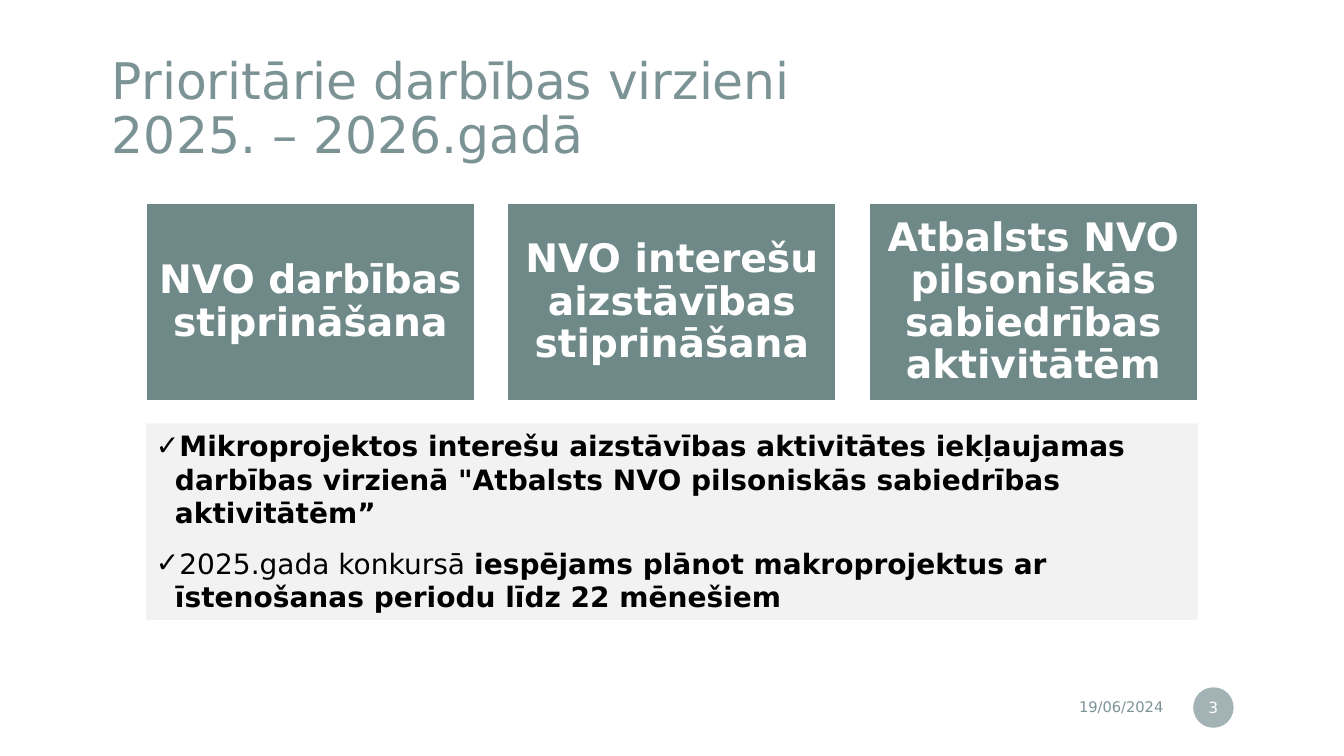
from lxml.etree import SubElement
from pptx import Presentation
from pptx.dml.color import RGBColor
from pptx.enum.shapes import MSO_SHAPE as Form
from pptx.enum.text import MSO_ANCHOR as Anchor, MSO_AUTO_SIZE as Fit, PP_ALIGN as Align
from pptx.oxml.ns import qn
from pptx.util import Cm, Pt

# Content
TITLE = "Prioritārie darbības virzieni\v2025. – 2026.gadā"
CARDS = [
    "NVO darbības stiprināšana",
    "NVO interešu aizstāvības stiprināšana",
    "Atbalsts NVO pilsoniskās sabiedrības aktivitātēm",
]
# Each point is a list of (text, bold) runs
POINTS = [
    [("Mikroprojektos interešu aizstāvības aktivitātes iekļaujamas darbības virzienā "
      "\"Atbalsts NVO pilsoniskās sabiedrības aktivitātēm”", True)],
    [("2025.gada konkursā ", False),
     ("iespējams plānot makroprojektus ar īstenošanas periodu līdz 22 mēnešiem", True)],
]
DATE = "19/06/2024"
PAGE = "3"

# Style
FONT = "DejaVu Sans"
COLORS = {"head": "7C9396", "card": "6F8989", "panel": "F2F2F2",
          "white": "FFFFFF", "black": "000000"}

# Card grid, in cm
LEFT, TOP, WIDE, HIGH, GAP = 3.68, 5.13, 8.28, 4.98, 0.83
SPAN = len(CARDS) * (WIDE + GAP) - GAP


def color(name):
    return RGBColor.from_string(COLORS[name])


def place(shape, left, top, width, height):
    shape.left, shape.top = Cm(left), Cm(top)
    shape.width, shape.height = Cm(width), Cm(height)


def fill(shape, name):
    shape.fill.solid()
    shape.fill.fore_color.rgb = color(name)


def setup(frame, side, edge, anchor):
    frame.word_wrap = True
    frame.auto_size = Fit.NONE
    frame.vertical_anchor = anchor
    frame.margin_left = frame.margin_right = Cm(side)
    frame.margin_top = frame.margin_bottom = Cm(edge)


def style(para, size, name, align, bold=None, line=1.0):
    para.alignment = align
    para.line_spacing = line
    para.space_before = Pt(0)
    font = para.font
    font.name, font.size, font.bold = FONT, Pt(size), bold
    font.color.rgb = color(name)


def bullet(para):
    props = para._p.get_or_add_pPr()
    props.set("marL", str(Cm(0.48)))
    props.set("indent", str(Cm(-0.48)))
    SubElement(props, qn("a:buFont"), typeface=FONT)
    SubElement(props, qn("a:buChar"), char="✓")


def add_form(slide, form, name, box):
    shape = slide.shapes.add_shape(form, 0, 0, 0, 0)
    place(shape, *box)
    shape.shadow.inherit = False
    fill(shape, name)
    return shape


def main():
    deck = Presentation()
    deck.slide_width, deck.slide_height = Cm(33.87), Cm(19.05)
    slide = deck.slides.add_slide(deck.slide_layouts[1])

    # Title
    title = slide.shapes.title
    place(title, 2.31, 1.22, 22.17, 3.12)
    setup(title.text_frame, 0.51, 0.51, Anchor.MIDDLE)
    title.text_frame.text = TITLE
    style(title.text_frame.paragraphs[0], 36, "head", Align.LEFT, line=0.9)

    # Date
    date = slide.shapes.add_textbox(0, 0, 0, 0)
    place(date, 21.92, 17.37, 7.65, 0.89)
    setup(date.text_frame, 0.25, 0.13, Anchor.MIDDLE)
    date.text_frame.text = DATE
    style(date.text_frame.paragraphs[0], 10.5, "head", Align.RIGHT)

    # Page number
    page = add_form(slide, Form.OVAL, "head", (30.07, 17.32, 1.02, 1.02))
    page.line.fill.background()
    tint = page.fill._xPr.find(".//" + qn("a:srgbClr"))
    SubElement(tint, qn("a:alpha"), val="70000")
    setup(page.text_frame, 0.05, 0.13, Anchor.MIDDLE)
    page.text_frame.text = PAGE
    style(page.text_frame.paragraphs[0], 11, "white", Align.CENTER)

    # Panel with the list
    panel = slide.placeholders[1]
    place(panel, LEFT, 10.67, SPAN, 4.95)
    fill(panel, "panel")
    frame = panel.text_frame
    setup(frame, 0.25, 0.13, Anchor.TOP)
    for i, runs in enumerate(POINTS):
        para = frame.add_paragraph() if i else frame.paragraphs[0]
        bullet(para)
        style(para, 20, "black", Align.LEFT)
        para.space_after = Pt(12)
        for text, bold in runs:
            run = para.add_run()
            run.text, run.font.bold = text, bold

    # Cards
    for i, text in enumerate(CARDS):
        card = add_form(slide, Form.RECTANGLE, "card",
                        (LEFT + i * (WIDE + GAP), TOP, WIDE, HIGH))
        card.line.color.rgb = color("white")
        card.line.width = Pt(1)
        setup(card.text_frame, 0.3, 0.3, Anchor.MIDDLE)
        card.text_frame.text = text
        style(card.text_frame.paragraphs[0], 28, "white", Align.CENTER, True, 0.9)

    deck.save("out.pptx")


if __name__ == "__main__":
    main()
